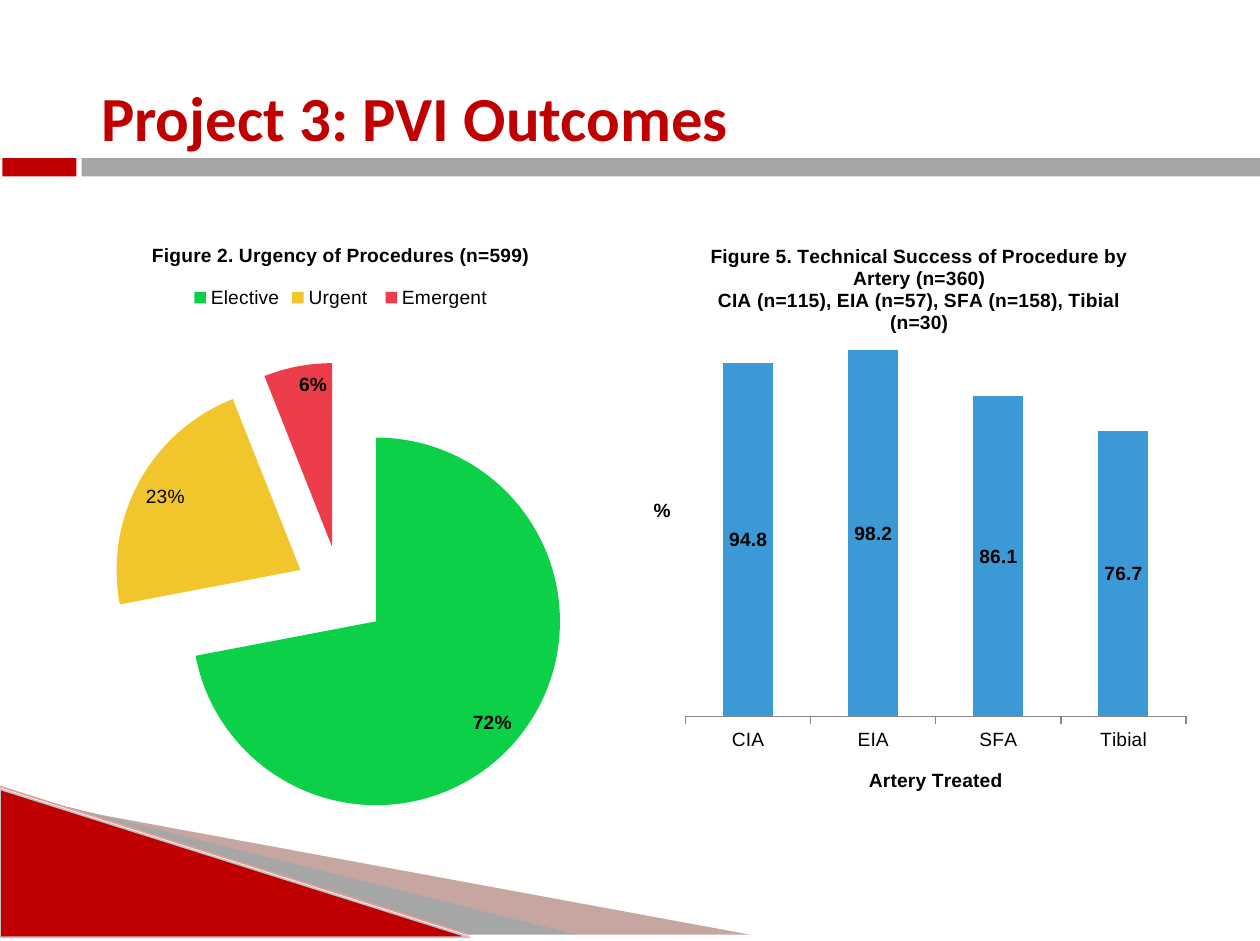
from lxml import etree
from pptx import Presentation
from pptx.chart.data import CategoryChartData
from pptx.dml.color import RGBColor
from pptx.enum.chart import (XL_CHART_TYPE, XL_LABEL_POSITION, XL_LEGEND_POSITION,
                             XL_TICK_LABEL_POSITION, XL_TICK_MARK)
from pptx.enum.shapes import MSO_CONNECTOR, MSO_SHAPE
from pptx.enum.text import MSO_ANCHOR, PP_ALIGN
from pptx.oxml.ns import qn
from pptx.util import Pt

PIE, COLUMNS = XL_CHART_TYPE.PIE, XL_CHART_TYPE.COLUMN_CLUSTERED
INSIDE_END, CENTER = XL_LABEL_POSITION.INSIDE_END, XL_LABEL_POSITION.CENTER
RECT, RIGHT_TRIANGLE = MSO_SHAPE.RECTANGLE, MSO_SHAPE.RIGHT_TRIANGLE
LEGEND_TOP = XL_LEGEND_POSITION.TOP
TICK_OUTSIDE = XL_TICK_MARK.OUTSIDE
NEXT_TO_AXIS = XL_TICK_LABEL_POSITION.NEXT_TO_AXIS

RED = RGBColor(0xC0, 0x00, 0x00)
MAROON = RGBColor(0x74, 0x22, 0x17)
PINK = RGBColor(0xE5, 0x9C, 0x94)
GRAY = RGBColor(0xA6, 0xA6, 0xA6)
LIGHT_GRAY = RGBColor(0xC3, 0xC1, 0xC1)
AXIS_GRAY = RGBColor(0x86, 0x86, 0x86)
WHITE = RGBColor(0xFF, 0xFF, 0xFF)
BLACK = RGBColor(0x00, 0x00, 0x00)
BLUE = RGBColor(0x3B, 0x9A, 0xD5)
GREEN = RGBColor(0x0B, 0xD0, 0x48)
YELLOW = RGBColor(0xF0, 0xC6, 0x2C)
CORAL = RGBColor(0xED, 0x3D, 0x4A)

# Content
TITLE = "Project 3: PVI Outcomes"
URGENCY_TITLE = ["Figure 2. Urgency of Procedures (n=599)"]
URGENCY = [("Elective", 72, GREEN), ("Urgent ", 22, YELLOW), ("Emergent", 6, CORAL)]
URGENT_INDEX, URGENT_LABEL = 1, "23%"
SUCCESS_TITLE = ["Figure 5. Technical Success of Procedure by Artery (n=360)",
                 "CIA (n=115), EIA (n=57), SFA (n=158), Tibial (n=30)"]
SUCCESS = [("CIA", 94.8), ("EIA", 98.2), ("SFA", 86.1), ("Tibial", 76.7)]

# Geometry in points; plot areas as shares of their chart (x, y, w, h)
SLIDE_W, SLIDE_H = 722.88, 540
MARGIN = 36
CHART_TOP, CHART_W, CHART_H = 126, 319, 356.4
BANDS = [(0, 90, SLIDE_W, 12.2, WHITE),
         (1.4, 90.7, 42.5, 10.6, RED),
         (46.8, 90.7, SLIDE_W - 46.8, 10.6, GRAY)]
WEDGES = [([(40.3, 464.4), (430.6, 536.4), (330.5, 536.4), (40.3, 463.7)], MAROON, 40),
          ([(38.9, 463), (331.2, 536.4), (269.3, 536.4), (39.6, 463.7)], GRAY, 100)]
CORNER = (0, 452.9, 269.3, 85)
CORNER_EDGE = (0, 451.4, 269.3, 536.4)
PIE_AREA = (0.08, 0.23, 0.84, 0.74)
COLUMN_AREA = (0.08, 0.08, 0.9, 0.72)

prs = Presentation()
prs.slide_width, prs.slide_height = Pt(SLIDE_W), Pt(SLIDE_H)
slide = prs.slides.add_slide(prs.slide_layouts[5])
shapes = slide.shapes


def paint(shape, color):
    shape.shadow.inherit = False
    shape.fill.solid()
    shape.fill.fore_color.rgb = color
    shape.line.fill.background()


def style(font, size=11, bold=False, name="Arial", color=BLACK):
    font.size, font.bold, font.name = Pt(size), bold, name
    font.color.rgb = color


def write_title(chart_text, lines):
    frame = chart_text.text_frame
    for i, line in enumerate(lines):
        paragraph = frame.paragraphs[0] if i == 0 else frame.add_paragraph()
        paragraph.text = line
        style(paragraph.font, bold=True)
    return frame


def fix_plot_area(chart, area):
    plot_area = chart._chartSpace.chart.plotArea
    for old_layout in plot_area.findall(qn("c:layout")):
        plot_area.remove(old_layout)
    layout = etree.Element(qn("c:layout"))
    plot_area.insert(0, layout)
    manual = etree.SubElement(layout, qn("c:manualLayout"))
    modes = [("layoutTarget", "inner"), ("xMode", "edge"), ("yMode", "edge")]
    for tag, value in modes + list(zip("xywh", area)):
        etree.SubElement(manual, qn("c:" + tag)).set("val", str(value))


def add_figure(kind, left, title, rows, area):
    data = CategoryChartData()
    data.categories = [row[0] for row in rows]
    data.add_series("Series 1", [row[1] for row in rows])
    chart = shapes.add_chart(kind, Pt(left), Pt(CHART_TOP), Pt(CHART_W), Pt(CHART_H),
                             data).chart
    style(chart.font, size=10, name="Calibri")
    write_title(chart.chart_title, title)
    chart.chart_title.include_in_layout = False
    fix_plot_area(chart, area)
    return chart


def label_values(labels, position, number_format):
    labels.position = position
    labels.number_format, labels.number_format_is_linked = number_format, False
    style(labels.font, bold=True)


# Corner wedges
for points, color, opacity in WEDGES:
    builder = shapes.build_freeform(Pt(points[0][0]), Pt(points[0][1]))
    builder.add_line_segments([(Pt(x), Pt(y)) for x, y in points[1:]])
    wedge = builder.convert_to_shape()
    paint(wedge, color)
    if opacity < 100:
        rgb = wedge.fill._xPr.find(".//" + qn("a:srgbClr"))
        etree.SubElement(rgb, qn("a:alpha")).set("val", str(opacity * 1000))

corner = shapes.add_shape(RIGHT_TRIANGLE, *map(Pt, CORNER))
paint(corner, RED)
corner.line.color.rgb = LIGHT_GRAY
corner.line.width = Pt(1)

corner_edge = shapes.add_connector(MSO_CONNECTOR.STRAIGHT, *map(Pt, CORNER_EDGE))
corner_edge.line.color.rgb = PINK
corner_edge.line.width = Pt(0.95)
etree.SubElement(corner_edge._element.spPr, qn("a:effectLst"))

# Bands under the title
for *box, color in BANDS:
    paint(shapes.add_shape(RECT, *map(Pt, box)), color)

# Title
heading = shapes.title
heading.left, heading.top = Pt(MARGIN), Pt(21.6)
heading.width, heading.height = Pt(SLIDE_W - 2 * MARGIN), Pt(90)
heading.text_frame.text = TITLE
heading.text_frame.vertical_anchor = MSO_ANCHOR.MIDDLE
heading_line = heading.text_frame.paragraphs[0]
heading_line.alignment = PP_ALIGN.LEFT
heading_line._p.get_or_add_pPr().set("marL", str(Pt(14.8)))
style(heading_line.font, 36, True, "Calibri", RED)

# Urgency pie
urgency = add_figure(PIE, MARGIN, URGENCY_TITLE, URGENCY, PIE_AREA)
urgency.has_legend = True
urgency.legend.position = LEGEND_TOP
urgency.legend.include_in_layout = False
style(urgency.legend.font)
pie = urgency.plots[0]
pie.vary_by_categories = True
slices = pie.series[0]
pie_labels = slices.data_labels
label_values(pie_labels, INSIDE_END, "0%")
pie_labels.show_percentage, pie_labels.show_value = True, False
explosion = etree.Element(qn("c:explosion"), val="25")
slices._element.find(qn("c:tx")).addnext(explosion)
for i, (_, _, color) in enumerate(URGENCY):
    fill = slices.points[i].format.fill
    fill.solid()
    fill.fore_color.rgb = color

# The urgent share is rounded up from its unrounded count
urgent_label = slices.points[URGENT_INDEX].data_label
write_title(urgent_label, [URGENT_LABEL])
urgent_label.position = INSIDE_END

# Success columns
success = add_figure(COLUMNS, SLIDE_W - MARGIN - CHART_W, SUCCESS_TITLE, SUCCESS,
                     COLUMN_AREA)
success.has_legend = False
columns = success.plots[0]
columns.vary_by_categories = False
columns.gap_width = 150
column_labels = columns.series[0].data_labels
label_values(column_labels, CENTER, "0.0")
column_labels.show_value = True
column_fill = columns.series[0].format.fill
column_fill.solid()
column_fill.fore_color.rgb = BLUE

arteries = success.category_axis
write_title(arteries.axis_title, ["Artery Treated"])
arteries.major_tick_mark = TICK_OUTSIDE
arteries.tick_label_position = NEXT_TO_AXIS
arteries.format.line.color.rgb = AXIS_GRAY
style(arteries.tick_labels.font)

percent = success.value_axis
percent.minimum_scale, percent.maximum_scale = 0, 120
percent.has_major_gridlines = False
percent_title = write_title(percent.axis_title, ["%"])
percent_title._txBody.bodyPr.set("rot", "0")
percent_title._txBody.bodyPr.set("vert", "horz")
percent.visible = False

prs.save("out.pptx")
